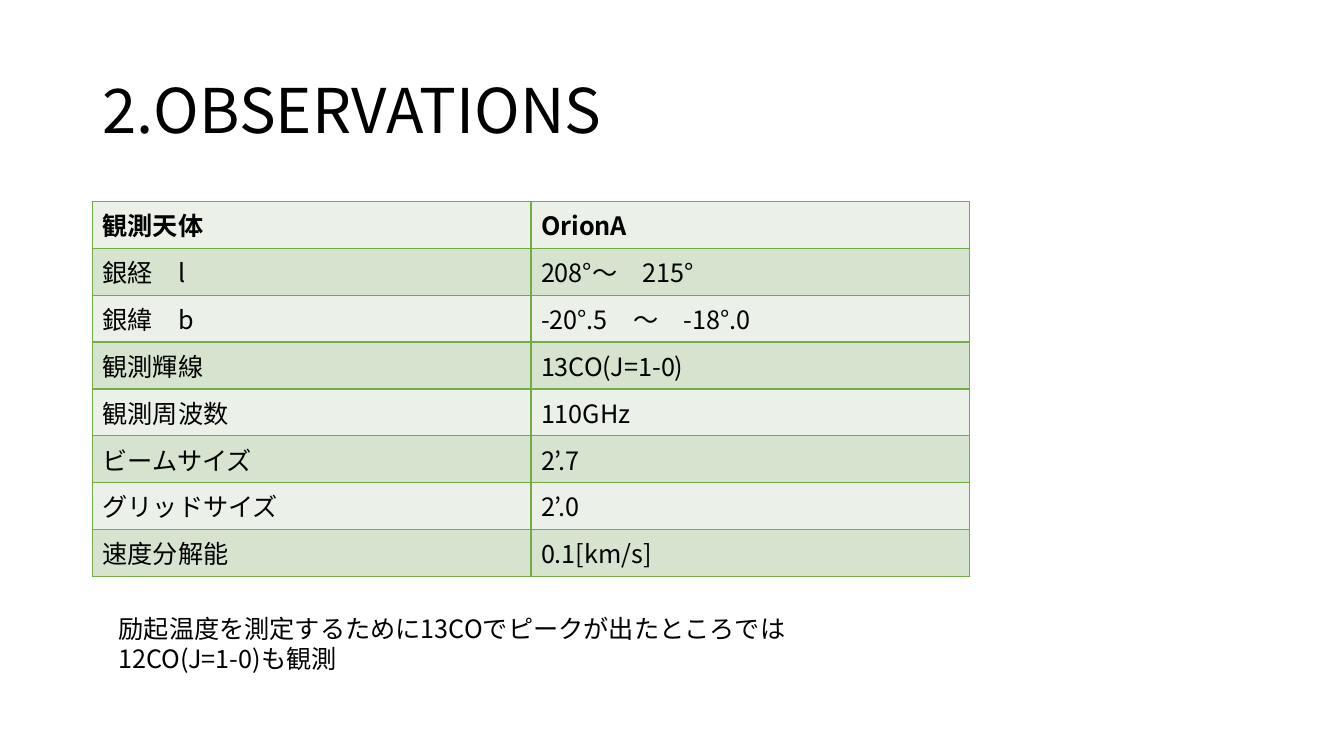
from dataclasses import dataclass

from lxml.etree import SubElement
from pptx import Presentation
from pptx.dml.color import RGBColor
from pptx.enum.text import MSO_ANCHOR, MSO_AUTO_SIZE, PP_ALIGN
from pptx.oxml import parse_xml
from pptx.oxml.ns import nsdecls, qn
from pptx.util import Cm, Pt

FONT = "Noto Sans CJK JP"
BLACK = "000000"
BORDER = "70AD47"
BANDS = ("EBF1E9", "D5E3CF")
LEFT = 2.33
COL_WIDTH, ROW_HEIGHT = 11.05, 1.18


@dataclass
class Observation:
    item: str
    value: str


OBSERVATIONS = [
    Observation("観測天体", "OrionA"),
    Observation("銀経　l", "208°～　215°"),
    Observation("銀緯　b", "-20°.5　～　-18°.0"),
    Observation("観測輝線", "13CO(J=1-0)"),
    Observation("観測周波数", "110GHz"),
    Observation("ビームサイズ", "2’.7"),
    Observation("グリッドサイズ", "2’.0"),
    Observation("速度分解能", "0.1[km/s]"),
]


def rgb(color: str) -> RGBColor:
    return RGBColor.from_string(color)


def write(tf, text: str, size: float, bold: bool = False) -> None:
    """Set the text, then format its runs for Latin and Japanese glyphs."""
    tf.text = text
    for p in tf.paragraphs:
        p.alignment = PP_ALIGN.LEFT
        for r in p.runs:
            r.font.size = Pt(size)
            r.font.bold = bold
            r.font.name = FONT
            r.font.color.rgb = rgb(BLACK)
            SubElement(r.font._element, qn("a:ea")).set("typeface", FONT)


def set_borders(cell, color: str, width: float) -> None:
    tcPr = cell._tc.get_or_add_tcPr()
    for i, side in enumerate(("lnL", "lnR", "lnT", "lnB")):
        tcPr.insert(i, parse_xml(
            f'<a:{side} {nsdecls("a")} w="{Pt(width)}"><a:solidFill>'
            f'<a:srgbClr val="{color}"/></a:solidFill></a:{side}>'))


def add_observations(s, rows: list[Observation], top: float) -> None:
    frame = s.shapes.add_table(len(rows), 2, Cm(LEFT), Cm(top),
                               Cm(2 * COL_WIDTH), Cm(ROW_HEIGHT * len(rows)))
    table = frame.table
    for i, row in enumerate(rows):
        table.rows[i].height = Cm(ROW_HEIGHT)
        for j, text in enumerate((row.item, row.value)):
            cell = table.cell(i, j)
            cell.fill.solid()
            cell.fill.fore_color.rgb = rgb(BANDS[i % 2])
            set_borders(cell, BORDER, 1)
            write(cell.text_frame, text, 18, bold=i == 0)


def main() -> None:
    prs = Presentation()
    prs.slide_width, prs.slide_height = Cm(33.87), Cm(19.05)
    s = prs.slides.add_slide(prs.slide_layouts[5])

    # Title
    title = s.shapes.title
    title.left, title.top, title.width, title.height = (
        Cm(LEFT), Cm(1.01), Cm(29.21), Cm(3.68))
    tf = title.text_frame
    write(tf, "2.OBSERVATIONS", 44)
    tf.auto_size = MSO_AUTO_SIZE.NONE
    tf.vertical_anchor = MSO_ANCHOR.MIDDLE
    tf.paragraphs[0].line_spacing = 0.9

    # Observation parameters
    add_observations(s, OBSERVATIONS, 5.08)

    # Note below the table
    sp = s.shapes.add_textbox(Cm(2.74), Cm(15.32), Cm(20.14), Cm(1.8))
    tf = sp.text_frame
    tf.word_wrap = True
    tf.auto_size = MSO_AUTO_SIZE.SHAPE_TO_FIT_TEXT
    write(tf, "励起温度を測定するために13COでピークが出たところでは"
              "12CO(J=1-0)も観測", 18)

    prs.save("out.pptx")


if __name__ == "__main__":
    main()
